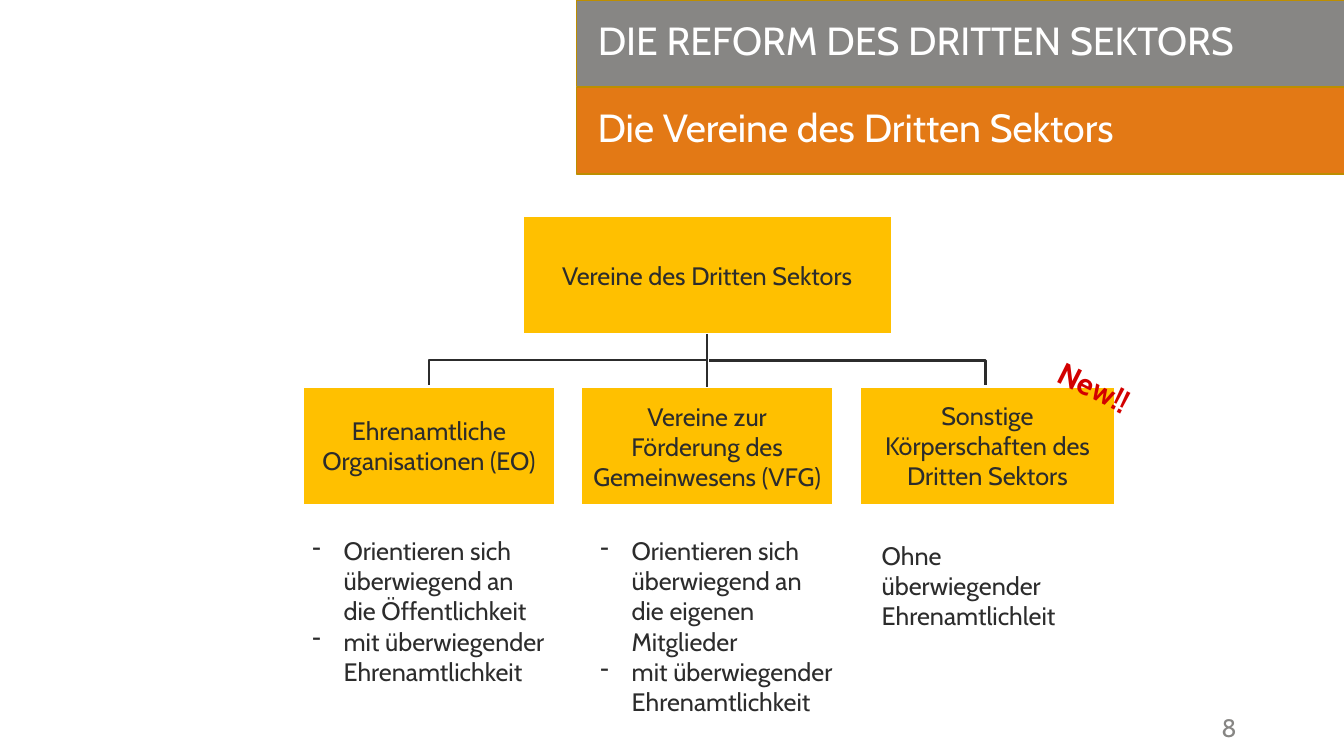
"""Build the slide on the associations of the third sector."""
from dataclasses import dataclass

from lxml import etree
from pptx import Presentation, util as u
from pptx.dml.color import RGBColor
from pptx.enum import shapes, text
from pptx.oxml.ns import qn

GREY, ORANGE, YELLOW, WHITE = "878684", "E37915", "FFC000", "FFFFFF"
DARK, RED, GOLD = "2C2C2C", "D20000", "BD8E00"
BODY = {"size": 18, "color": DARK}
HEADING = {"size": 28, "color": WHITE}


@dataclass
class Area:
    left: float
    top: float
    width: float
    height: float

    def lengths(self) -> tuple:
        """Return the four measures as lengths."""
        return tuple(map(u.Cm, (self.left, self.top, self.width, self.height)))


@dataclass
class Branch:
    box: Area
    label: str
    note: Area
    lines: list[str]
    bulleted: bool = True


@dataclass
class Elbow:
    area: Area
    preset: str
    width: float
    rotation: int = 0


BRANCHES = [
    Branch(Area(7.62, 9.73, 6.38, 3), "Ehrenamtliche Organisationen (EO)",
           Area(7.62, 13.36, 6.38, 4.11),
           ["Orientieren sich überwiegend an die Öffentlichkeit",
            "mit überwiegender Ehrenamtlichkeit"]),
    Branch(Area(14.63, 9.75, 6.38, 3), "Vereine zur Förderung des Gemeinwesens (VFG)",
           Area(14.88, 13.36, 6.38, 4.88),
           ["Orientieren sich überwiegend an die eigenen Mitglieder",
            "mit überwiegender Ehrenamtlichkeit"]),
    Branch(Area(21.67, 9.73, 6.43, 3), "Sonstige Körperschaften des Dritten Sektors",
           Area(21.97, 13.49, 5.87, 2.57),
           ["Ohne überwiegender Ehrenamtlichleit"], bulleted=False),
]
ELBOWS = [
    Elbow(Area(13.67, 5.56, 1.3, 7.01), "bentConnector3", 1.5, 90),
    Elbow(Area(17.88, 9.09, 6.96, 0.71), "bentConnector2", 1.75),
]


def color(value: str) -> RGBColor:
    """Convert a hex string to a colour."""
    return RGBColor.from_string(value)


def apply(target, values: dict) -> None:
    """Set each named attribute on the target."""
    for name, value in values.items():
        setattr(target, name, value)


def add_dash(paragraph) -> None:
    """Give the paragraph a hanging dash bullet."""
    properties = paragraph._p.get_or_add_pPr()
    properties.set("marL", str(u.Cm(0.79)))
    properties.set("indent", str(-u.Cm(0.79)))
    etree.SubElement(properties, qn("a:buChar")).set("char", "-")


def write(shape, lines: list[str], style: dict, frame: dict, paragraph_format: dict,
          bulleted: bool = False) -> None:
    """Write the lines into the shape, one paragraph each."""
    text_frame = shape.text_frame
    apply(text_frame, {"word_wrap": True, **frame})
    for index, line in enumerate(lines):
        paragraph = text_frame.add_paragraph() if index else text_frame.paragraphs[0]
        if bulleted:
            add_dash(paragraph)
        apply(paragraph, paragraph_format)
        run = paragraph.add_run()
        run.text = line
        apply(run.font, {"name": "Cabin", "size": u.Pt(style["size"]),
                         "bold": style.get("bold", False)})
        run.font.color.rgb = color(style["color"])


def write_heading(shape, line: str) -> None:
    """Write a banner heading."""
    write(shape, [line], HEADING,
          {"vertical_anchor": text.MSO_ANCHOR.MIDDLE, "auto_size": text.MSO_AUTO_SIZE.NONE},
          {"alignment": text.PP_ALIGN.LEFT, "line_spacing": 0.85})


def add_rectangle(slide, area: Area, fill: str, line: str | None = None, width: float = 1):
    """Add a filled rectangle, outlined if a line colour is given."""
    shape = slide.shapes.add_shape(shapes.MSO_SHAPE.RECTANGLE, *area.lengths())
    shape.shadow.inherit = False
    shape.fill.solid()
    shape.fill.fore_color.rgb = color(fill)
    if line:
        shape.line.color.rgb = color(line)
        shape.line.width = u.Pt(width)
    else:
        shape.line.fill.background()
    return shape


def add_box(slide, area: Area, label: str):
    """Add a yellow box of the chart."""
    box = add_rectangle(slide, area, YELLOW, WHITE, 2)
    write(box, [label], BODY, {"vertical_anchor": text.MSO_ANCHOR.MIDDLE},
          {"alignment": text.PP_ALIGN.CENTER})
    return box


def add_text(slide, area: Area, lines: list[str], style: dict, wrap: bool = True,
             bulleted: bool = False):
    """Add a text box that grows with its text."""
    box = slide.shapes.add_textbox(*area.lengths())
    write(box, lines, style,
          {"word_wrap": wrap, "auto_size": text.MSO_AUTO_SIZE.SHAPE_TO_FIT_TEXT}, {}, bulleted)
    return box


def add_line(slide, kind, area: Area, width: float):
    """Add a dark connector across the area."""
    left, top, across, down = area.lengths()
    connector = slide.shapes.add_connector(kind, left, top, left + across, top + down)
    connector.line.color.rgb = color(DARK)
    connector.line.width = u.Pt(width)
    etree.SubElement(connector.element.spPr, qn("a:effectLst"))
    return connector


def add_elbow(slide, elbow: Elbow) -> None:
    """Add a bent connector."""
    connector = add_line(slide, shapes.MSO_CONNECTOR.ELBOW, elbow.area, elbow.width)
    properties = connector.element.spPr
    properties.find(qn("a:prstGeom")).set("prst", elbow.preset)
    if elbow.rotation:
        properties.find(qn("a:xfrm")).set("rot", str(elbow.rotation * 60000))


def add_banner(slide) -> None:
    """Add the two heading bands."""
    for top, fill in ((0, GREY), (2.21, ORANGE)):
        add_rectangle(slide, Area(14.53, top, 19.35, 2.18), fill, GOLD)
    title = slide.shapes.title
    apply(title, dict(zip(("left", "top", "width", "height"),
                          Area(14.81, 0.2, 19.05, 1.78).lengths())))
    slide.shapes.element.append(title.element)
    write_heading(title, "DIE REFORM DES DRITTEN SEKTORS")
    subtitle = add_rectangle(slide, Area(14.81, 2.41, 19.05, 1.78), ORANGE)
    write_heading(subtitle, "Die Vereine des Dritten Sektors")


def add_chart_tree(slide) -> None:
    """Add the root box, its branches and their connectors."""
    root = add_box(slide, Area(13.16, 5.44, 9.32, 3), "Vereine des Dritten Sektors")
    for elbow in ELBOWS:
        add_elbow(slide, elbow)
    boxes = []
    for branch in BRANCHES:
        boxes.append(add_box(slide, branch.box, branch.label))
        add_text(slide, branch.note, branch.lines, BODY, bulleted=branch.bulleted)
    stem = add_line(slide, shapes.MSO_CONNECTOR.STRAIGHT, Area(17.82, 8.44, 0, 1.31), 1.5)
    stem.begin_connect(root, 2)
    stem.end_connect(boxes[1], 0)


def main() -> None:
    """Create and save the presentation."""
    presentation = Presentation()
    apply(presentation, {"slide_width": u.Cm(33.87), "slide_height": u.Cm(19.05)})
    slide = presentation.slides.add_slide(presentation.slide_layouts[5])
    add_text(slide, Area(30.53, 17.83, 1.68, 1.02), ["8"], {"size": 18, "color": GREY}, wrap=False)
    add_banner(slide)
    add_chart_tree(slide)
    badge = add_text(slide, Area(26.39, 9.19, 2.51, 1.19), ["New!!"],
                     {"size": 22, "color": RED, "bold": True}, wrap=False)
    badge.rotation = 26.5
    presentation.save("out.pptx")


if __name__ == "__main__":
    main()
